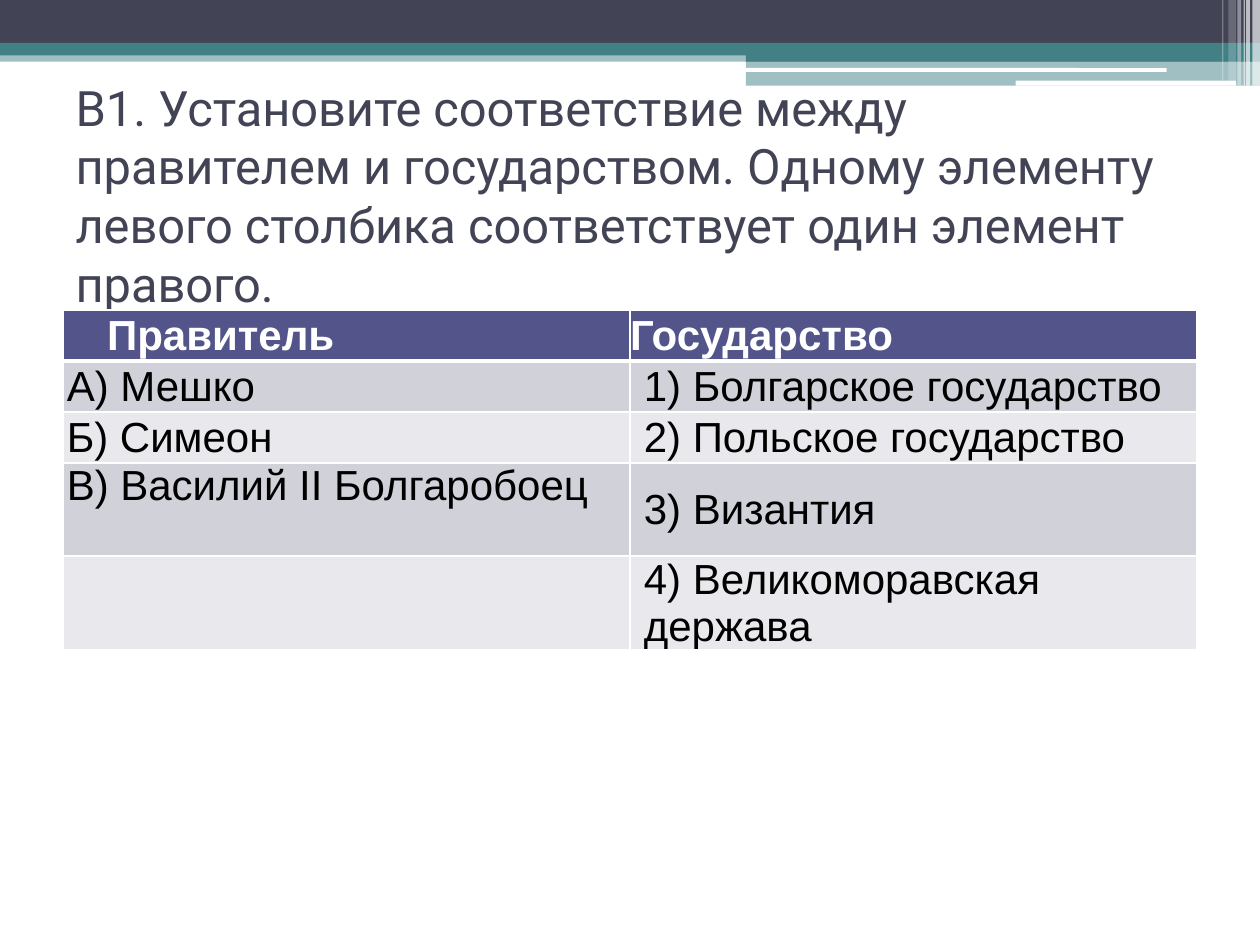
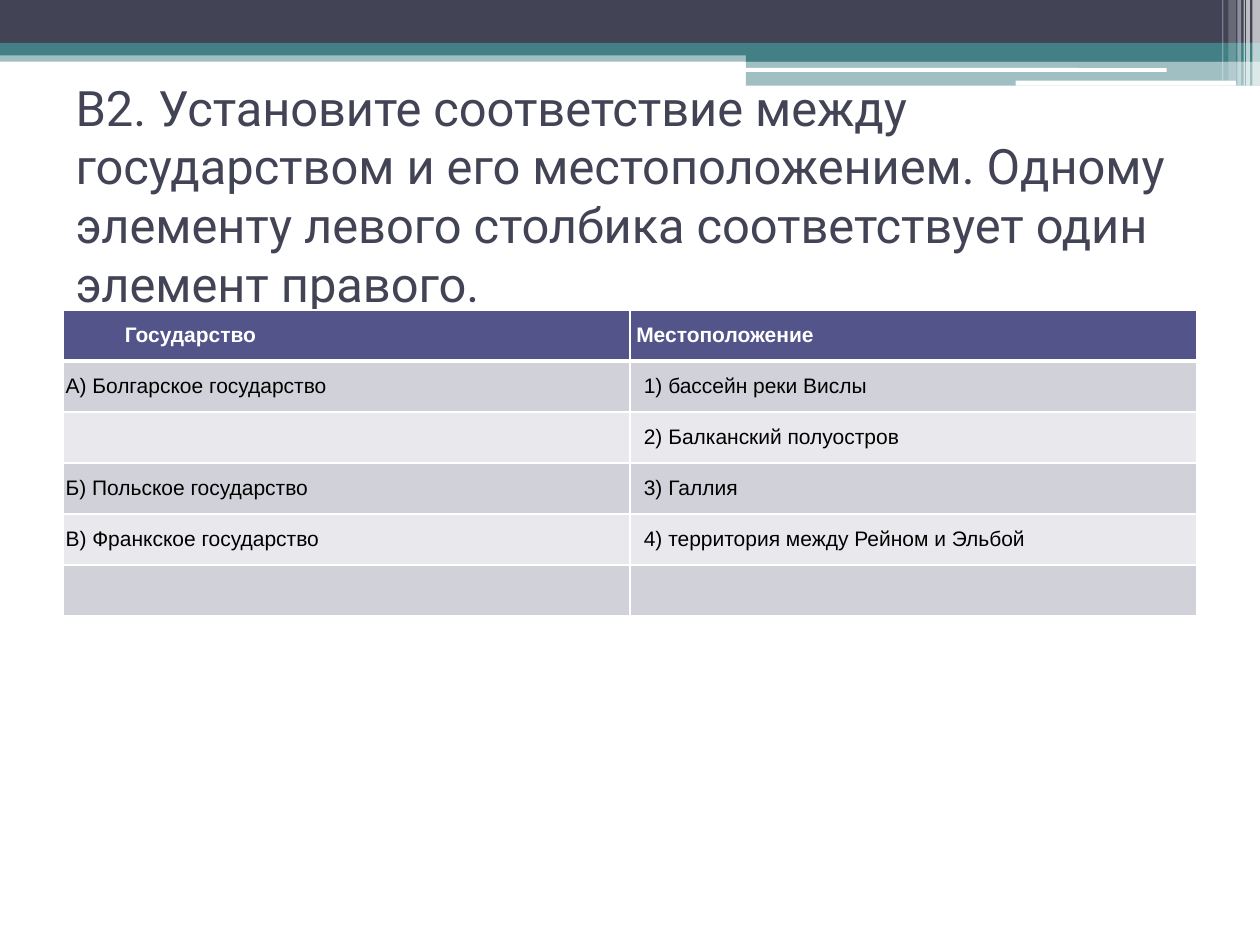
import pptx
import pptx.util
import pptx.dml.color
import pptx.enum.shapes
import pptx.enum.text
import pptx.oxml
import pptx.oxml.ns
from lxml import etree

Inches, Pt = pptx.util.Inches, pptx.util.Pt
RGB = pptx.dml.color.RGBColor.from_string
SHAPE = pptx.enum.shapes.MSO_SHAPE
ANCHOR = pptx.enum.text.MSO_ANCHOR
qn = pptx.oxml.ns.qn

COLORS = {
    "dark": "424456",
    "teal": "438086",
    "white": "FFFFFF",
    "black": "000000",
    "header": "53548A",
    "odd_row": "D1D1DA",
    "even_row": "E9E9ED",
}
TITLE_FONT, TABLE_FONT = "Roboto", "Arial"

# left, top, width, height, colour, opacity in percent
BANDS = [
    (0, 0.4, 10, 0.09, "teal", 50),
    (0, 0, 10, 0.34, "dark", 100),
    (0, 0.34, 10, 0.1, "teal", 100),
    (5.92, 0.39, 4.08, 0.1, "teal", 100),
    (5.92, 0.48, 4.08, 0.2, "teal", 50),
]
ROUNDED_LINES = [(5.91, 0.54, 3.35, 0.03), (8.06, 0.64, 1.75, 0.04)]
# left, width, height, opacity in percent
CORNER_STRIPES = [
    (9.94, 0.06, 0.68, 65),
    (9.89, 0.03, 0.68, 65),
    (9.87, 0.01, 0.68, 60),
    (9.82, 0.03, 0.68, 40),
    (9.75, 0.06, 0.64, 20),
    (9.7, 0.01, 0.64, 30),
]


class Deck:
    def __init__(self):
        self.prs = pptx.Presentation()
        self.prs.slide_width, self.prs.slide_height = Inches(10), Inches(7.5)
        self.s = None

    def slide(self, title):
        self.s = self.prs.slides.add_slide(self.prs.slide_layouts[5])
        self.s.background.fill.solid()
        self.s.background.fill.fore_color.rgb = RGB(COLORS["white"])
        self.bands()
        self.title(title)

    def block(self, left, top, width, height, color, opacity=100, shape=SHAPE.RECTANGLE):
        sp = self.s.shapes.add_shape(
            shape, Inches(left), Inches(top), Inches(width), Inches(height))
        sp.shadow.inherit = False
        sp.line.fill.background()
        sp.fill.solid()
        sp.fill.fore_color.rgb = RGB(COLORS[color])
        if opacity < 100:
            clr = sp.fill._xPr.find(".//" + qn("a:srgbClr"))
            etree.SubElement(clr, qn("a:alpha")).set("val", str(opacity * 1000))

    def bands(self):
        for band in BANDS:
            self.block(*band)
        for line in ROUNDED_LINES:
            self.block(*line, "white", shape=SHAPE.ROUNDED_RECTANGLE)
        for left, width, height, opacity in CORNER_STRIPES:
            self.block(left, 0, width, height, "white", opacity)

    def title(self, text):
        sp = self.s.shapes.title
        sp.left, sp.top, sp.width, sp.height = map(Inches, (0.5, 1.25, 9, 1.17))
        tf = sp.text_frame
        tf.text = text
        tf.word_wrap = True
        tf.auto_size = pptx.enum.text.MSO_AUTO_SIZE.NONE
        tf.vertical_anchor = ANCHOR.MIDDLE
        tf.margin_bottom = Inches(0.63)  # lifts the centred text above the table
        p = tf.paragraphs[0]
        p.alignment = pptx.enum.text.PP_ALIGN.LEFT
        self.font(p.runs[0].font, TITLE_FONT, 27.9, "dark")

    def font(self, font, name, size, color, bold=False):
        font.name, font.size, font.bold = name, Pt(size), bold
        font.color.rgb = RGB(COLORS[color])

    def borders(self, cell, bottom):
        """Draw white cell borders; bottom is the lower line's width in points."""
        widths = {"lnL": 1, "lnR": 1, "lnT": 1, "lnB": bottom}
        tcPr = cell._tc.get_or_add_tcPr()
        for i, (tag, width) in enumerate(widths.items()):
            ln = etree.Element(qn("a:" + tag), w=str(Pt(width)))
            fill = etree.SubElement(ln, qn("a:solidFill"))
            etree.SubElement(fill, qn("a:srgbClr")).set("val", COLORS["white"])
            tcPr.insert(i, ln)

    def cell(self, cell, text, size, row, indent):
        color = "header" if row == 0 else "odd_row" if row % 2 else "even_row"
        cell.fill.solid()
        cell.fill.fore_color.rgb = RGB(COLORS[color])
        cell.margin_left = cell.margin_right = cell.margin_top = cell.margin_bottom = 0
        cell.vertical_anchor = ANCHOR.MIDDLE
        self.borders(cell, 3 if row == 0 else 1)
        p = cell.text_frame.paragraphs[0]
        p.text = text
        p._p.get_or_add_pPr().set("marL", str(Inches(indent)))
        font = p.runs[0].font if text else p.font
        self.font(font, TABLE_FONT, size, "black" if row else "white", row == 0)

    def table(self, rows, size, header_indents, body_indents, tall_rows=()):
        row_height = Inches(2.43 / 6)
        frame = self.s.shapes.add_table(
            len(rows), 2, Inches(0.5), Inches(2.46), Inches(9), row_height * len(rows))
        table = frame.table
        for r, texts in enumerate(rows):
            table.rows[r].height = Inches(0.74) if r in tall_rows else row_height
            indents = body_indents if r else header_indents
            for c, text in enumerate(texts):
                self.cell(table.cell(r, c), text, size, r, indents[c])
        return table


def main():
    deck = Deck()

    deck.slide("В1. Установите соответствие между правителем и государством. "
               "Одному элементу левого столбика соответствует один элемент правого.")
    rulers = deck.table([
        ("Правитель", "Государство"),
        ("А) Мешко", "1) Болгарское государство"),
        ("Б) Симеон", "2) Польское государство"),
        ("В) Василий II Болгаробоец", "3) Византия"),
        ("", "4) Великоморавская держава"),
    ], 24, (0.35, 0), (0.03, 0.11), tall_rows=(3, 4))
    rulers.cell(3, 0).vertical_anchor = ANCHOR.TOP

    deck.slide("В2. Установите соответствие между государством и его местоположением. "
               "Одному элементу левого столбика соответствует один элемент правого.")
    deck.table([
        ("Государство", "Местоположение"),
        ("А) Болгарское государство", "1) бассейн реки Вислы"),
        ("", "2) Балканский полуостров"),
        ("Б) Польское государство", "3) Галлия"),
        ("В) Франкское государство", "4) территория между Рейном и Эльбой"),
        ("", ""),
    ], 12, (0.49, 0.05), (0.02, 0.11))

    deck.prs.save("out.pptx")


if __name__ == "__main__":
    main()
